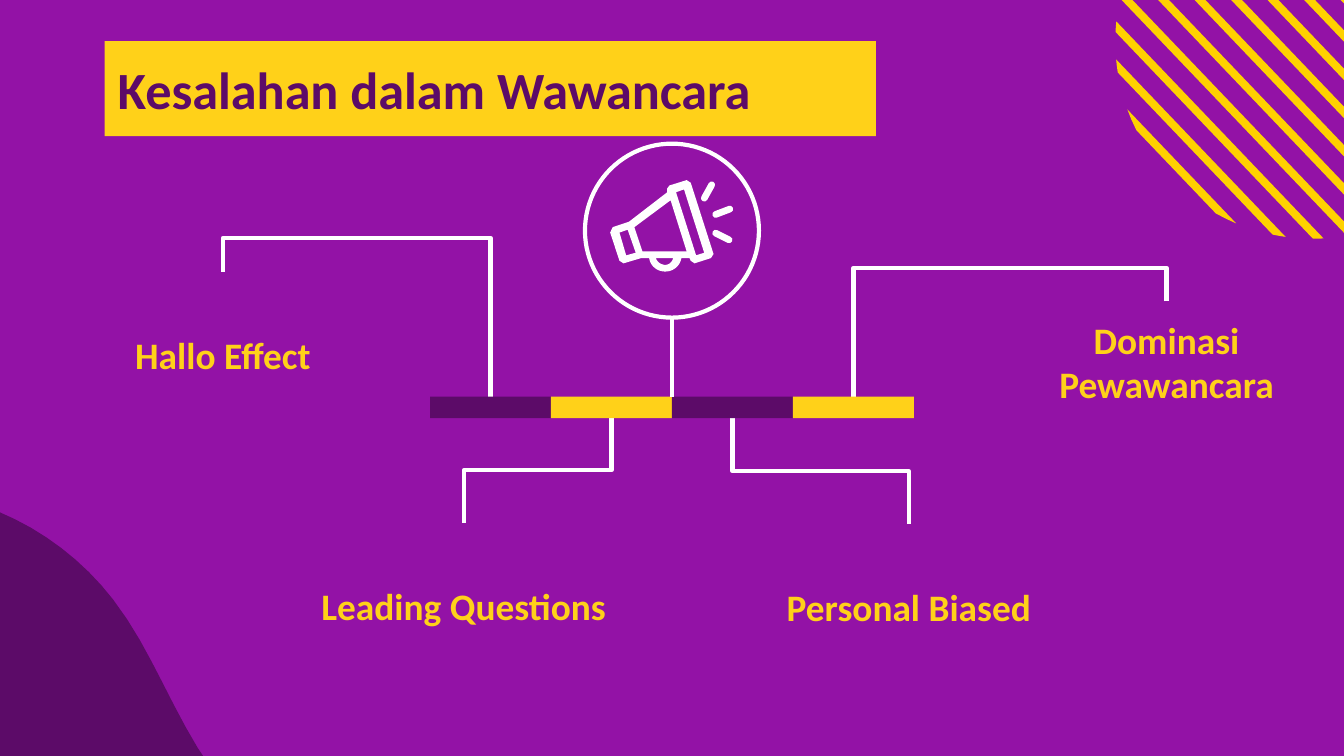
from math import hypot, sqrt

from lxml.etree import SubElement
from pptx import Presentation
from pptx.dml.color import RGBColor
from pptx.enum.shapes import MSO_CONNECTOR as LINK, MSO_SHAPE as PRESET
from pptx.enum.text import MSO_ANCHOR as ANCHOR, PP_ALIGN as ALIGN
from pptx.oxml.ns import qn
from pptx.util import Pt

PURPLE, PLUM, YELLOW, GOLD, WHITE = "9312A6", "5C0B68", "FFD119", "FFD100", "FFFFFF"

WAVE = [(0, 0), (0, 247.7), (334.8, 247.7),
        (328.3, 241.9, 321.8, 236.9, 314.6, 232.6),
        (288.7, 217.4, 258.5, 211, 229.7, 202.3),
        (200.9, 194.4, 171.4, 184.3, 149.8, 163.4),
        (117.4, 133.9, 106.6, 87.8, 79.9, 53.3),
        (59.8, 27.4, 31.7, 8.6, 0, 0)]
HORN = [(41, 0), (31.7, 2.9), (30.6, 4.5), (30.6, 6.5), (10.1, 22.3), (1.4, 25.2),
        (0, 28.1), (5, 43.2), (7.2, 44.6), (16.6, 41.8), (20.9, 41.8),
        (21.6, 46.1, 25.2, 49, 29.5, 49), (33.8, 49, 37.4, 46.1, 38.2, 41.8),
        (42.5, 41.8), (43.2, 43.2), (45.2, 44.6), (54, 41.8), (55.4, 39.6), (43.2, 1.4)]
CONE = [(32.4, 10.8), (41, 38.2), (17.3, 38.2), (13, 25.2)]
RIM = [(39.6, 5), (50.4, 38.9), (46.1, 40.3), (35.3, 6.5)]
GRIP = [(9.4, 26.6), (13.7, 38.9), (8.6, 40.3), (5, 28.1)]
BOWL = [(24.5, 41.8), (33.8, 41.8), (33.1, 43.9, 31.7, 45.4, 29.5, 45.4),
        (27.4, 45.4, 25.2, 43.9, 24.5, 41.8)]
SOUND_RAYS = [(50.4, 9.7, 54.4, 2.5), (56.5, 28.4, 63.7, 32), (56.5, 18.4, 64.1, 15.5)]


def paint(target, color):
    """Apply a solid hex colour to a fill."""
    target.solid()
    target.fore_color.rgb = RGBColor.from_string(color)


def write(slide, text, box, size=20, color=YELLOW, align=ALIGN.CENTER,
          anchor=ANCHOR.BOTTOM, fill=None):
    """Place bold text in a box, with an optional fill."""
    field = slide.shapes.add_textbox(*map(Pt, box))
    if fill:
        paint(field.fill, fill)
    frame = field.text_frame
    frame.word_wrap, frame.vertical_anchor = True, anchor
    frame.margin_left = frame.margin_right = Pt(7.2)
    frame.margin_top = frame.margin_bottom = Pt(7.2)
    line = frame.paragraphs[0]
    line.alignment = align
    run = line.add_run()
    run.text = text
    run.font.name, run.font.size, run.font.bold = "Calibri", Pt(size), True
    run.font.color.rgb = RGBColor.from_string(color)


def flatten(path_points, steps=10):
    """Turn corners and cubic curves into a list of corners."""
    corners = [path_points[0]]
    for part in path_points[1:]:
        if len(part) == 2:
            corners.append(part)
            continue
        control = [corners[-1], part[:2], part[2:4], part[4:]]
        for step in range(1, steps + 1):
            t = step / steps
            weights = ((1 - t) ** 3, 3 * t * (1 - t) ** 2, 3 * t * t * (1 - t), t ** 3)
            corners.append(tuple(sum(w * c[axis] for w, c in zip(weights, control))
                                 for axis in (0, 1)))
    return corners


def outline(slide, left, top, color, *contours):
    """Fill one freeform made of one or more closed contours."""
    placed = [[(Pt(left + x), Pt(top + y)) for x, y in flatten(c)] for c in contours]
    builder = slide.shapes.build_freeform(*placed[0][0], scale=1.0)
    for number, corners in enumerate(placed):
        if number:
            builder.move_to(*corners[0])
        builder.add_line_segments(corners[1:], close=True)
    shape = builder.convert_to_shape()
    shape.shadow.inherit = False
    paint(shape.fill, color)
    shape.line.fill.background()


def link(slide, x1, y1, x2, y2, kind=LINK.STRAIGHT, width=2.25):
    """Draw a white connector without a shadow."""
    connector = slide.shapes.add_connector(kind, *map(Pt, (x1, y1, x2, y2)))
    paint(connector.line.fill, WHITE)
    connector.line.width = Pt(width)
    SubElement(connector._element.spPr, qn("a:effectLst"))
    return connector


def elbow(slide, x1, y1, x2, y2, turn):
    """Link an upper point to a lower one, running level at height turn."""
    mid_x, mid_y = (x1 + x2) / 2, (y1 + y2) / 2
    half_w, half_h = (y2 - y1) / 2, abs(x2 - x1) / 2
    properties = link(slide, mid_x - half_w, mid_y - half_h, mid_x + half_w,
                      mid_y + half_h, LINK.ELBOW)._element.spPr
    frame = properties.find(qn("a:xfrm"))
    frame.set("rot", "5400000")
    if x2 > x1:
        frame.set("flipV", "1")
    geometry = properties.find(qn("a:prstGeom"))
    ratio = round((turn - y1) / (y2 - y1) * 100000)
    SubElement(geometry.find(qn("a:avLst")), qn("a:gd"), name="adj1", fmla=f"val {ratio}")


def striped_disc(slide, left, top, size, count=10, pitch=14.15, thickness=4.2):
    """Cut a disc into slanted stripes, from its lower left side."""
    radius = size / 2
    run, rise = 1 / hypot(1, 1.047), 1.047 / hypot(1, 1.047)

    def rim_point(offset, side):
        """Find the end of the chord at an offset from the centre."""
        along = side * sqrt(radius ** 2 - offset ** 2)
        return (radius + rise * offset + run * along,
                radius - run * offset + rise * along)

    for number in range(count):
        low = -101 + number * pitch
        offsets = [low, low + thickness / 2, low + thickness]
        stripe = ([rim_point(d, -1) for d in offsets]
                  + [rim_point(d, 1) for d in reversed(offsets)])
        outline(slide, left, top, GOLD, stripe)


def preset(slide, kind, box, fill=None):
    """Add a filled preset shape, or a white ring when no fill is given."""
    shape = slide.shapes.add_shape(kind, *map(Pt, box))
    shape.shadow.inherit = False
    if fill:
        paint(shape.fill, fill)
        shape.line.fill.background()
    else:
        shape.fill.background()
        paint(shape.line.fill, WHITE)
        shape.line.width = Pt(2.25)


def megaphone(slide, left, top, size, stem_end):
    """Draw the ringed megaphone and the stem below it."""
    preset(slide, PRESET.OVAL, (left, top, size, size))
    link(slide, left + size / 2, top + size, left + size / 2, stem_end)
    x, y = left + 13.5, top + 19.5
    outline(slide, x, y, WHITE, HORN, CONE, RIM, GRIP, BOWL)
    for x1, y1, x2, y2 in SOUND_RAYS:
        ray = link(slide, x + x1, y + y1, x + x2, y + y2, width=3.6)
        ray.line._ln.set("cap", "rnd")


def mistakes(slide, left, top, width, height):
    """Draw the four-part bar with a labelled branch for each part."""
    part = width / 4
    branches = [("Hallo Effect", -111, -67, -85), ("Leading Questions", 18, 67.6, 39.5),
                ("Personal Biased", 256.5, 68.4, 40), ("Dominasi Pewawancara", 394.5, -51, -69)]
    for number, (mistake, label_x, label_y, turn) in enumerate(branches):
        x, y = left + label_x, top + label_y
        joint = left + (number + 0.5) * part
        write(slide, mistake, (x - 95, y, 190, 63.4))
        if label_y < 0:
            elbow(slide, x, y, joint, top, top + turn)
        else:
            elbow(slide, joint, top + height, x, y, top + turn)
        preset(slide, PRESET.RECTANGLE, (left + number * part, top, part, height),
               (PLUM, YELLOW)[number % 2])


def main():
    """Build and save the slide."""
    deck = Presentation()
    deck.slide_width, deck.slide_height = Pt(720), Pt(405)
    slide = deck.slides.add_slide(deck.slide_layouts[6])
    paint(slide.background.fill, PURPLE)
    striped_disc(slide, 597.5, -83.3, 211.2)
    outline(slide, -19.4, 267.8, PLUM, WAVE)
    write(slide, "Kesalahan dalam Wawancara", (56, 22, 413.3, 51), size=28, color=PLUM,
          align=ALIGN.LEFT, anchor=ANCHOR.MIDDLE, fill=YELLOW)
    mistakes(slide, 230.4, 212.5, 259.2, 11.5)
    megaphone(slide, 313.4, 77, 93.2, 212.5)
    deck.save("out.pptx")


if __name__ == "__main__":
    main()
